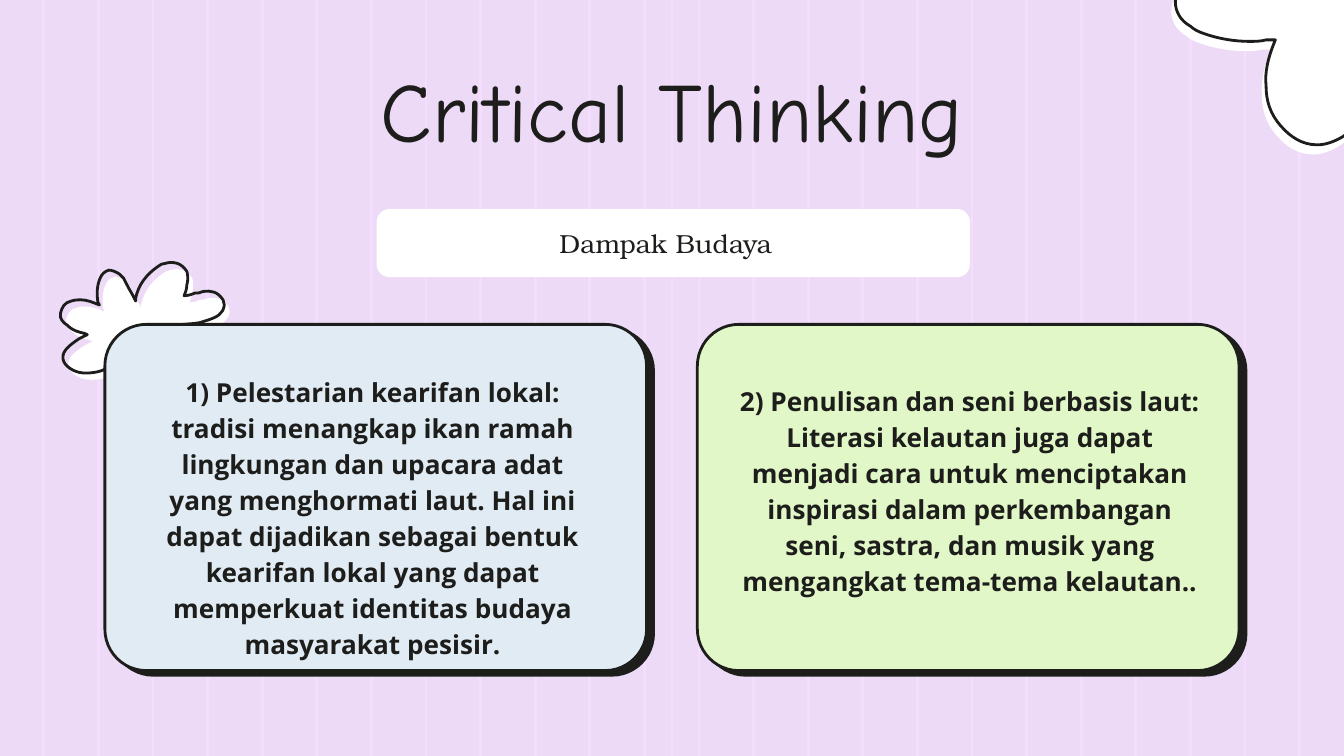
"""Build the Critical Thinking slide on cultural impact."""
from dataclasses import dataclass

import lxml.etree
import pptx
import pptx.dml.color
import pptx.enum.shapes
import pptx.enum.text
import pptx.oxml.ns
import pptx.util

Pt = pptx.util.Pt
RGBColor = pptx.dml.color.RGBColor
MSO_SHAPE = pptx.enum.shapes.MSO_SHAPE
MSO_ANCHOR = pptx.enum.text.MSO_ANCHOR
qn = pptx.oxml.ns.qn

INK = RGBColor(0x1D, 0x1E, 0x1B)
WHITE = RGBColor(0xFF, 0xFF, 0xFF)
LILAC = RGBColor(0xED, 0xDA, 0xF6)
STRIPE = RGBColor(0xF4, 0xDD, 0xFE)
BLUE = RGBColor(0xE1, 0xEB, 0xF4)
GREEN = RGBColor(0xE1, 0xF7, 0xC8)
WIDTH, HEIGHT = 720, 405


@dataclass(frozen=True)
class Box:
    x: float
    y: float
    w: float
    h: float

    def emu(self) -> tuple:
        return Pt(self.x), Pt(self.y), Pt(self.w), Pt(self.h)


@dataclass(frozen=True)
class Style:
    font: str
    size: float
    spacing: float
    bold: bool = False
    anchor: MSO_ANCHOR = MSO_ANCHOR.TOP


@dataclass(frozen=True)
class Card:
    box: Box
    fill: RGBColor
    text_box: Box
    text: str


@dataclass(frozen=True)
class Cloud:
    start: tuple
    curves: tuple
    outline_shift: tuple


TITLE = Style("Comic Neue", 45, 0.9)
LABEL = Style("TeX Gyre Bonum", 14, 1.15, anchor=MSO_ANCHOR.MIDDLE)
BODY = Style("Open Sans", 14, 1.15, bold=True)

CARDS = (
    Card(Box(56.2, 173.8, 290.2, 185.5), BLUE, Box(80.9, 191.9, 237.6, 124.5),
         "1) Pelestarian kearifan lokal: tradisi menangkap ikan ramah lingkungan "
         "dan upacara adat yang menghormati laut. Hal ini dapat dijadikan sebagai "
         "bentuk kearifan lokal yang dapat memperkuat identitas budaya masyarakat pesisir."),
    Card(Box(373.6, 173.8, 290.2, 185.5), GREEN, Box(387.1, 196.8, 265, 124.5),
         "2) Penulisan dan seni berbasis laut: Literasi kelautan juga dapat menjadi "
         "cara untuk menciptakan inspirasi dalam perkembangan seni, sastra, dan musik "
         "yang mengangkat tema-tema kelautan.."),
)

CORNER = Cloud((734.4, -32.4), (
    (727, -31.7, 720.7, -29.5, 714.2, -27.4), (704.2, -23, 695.5, -18, 687.6, -10.1),
    (684.7, -12.2, 681.1, -14.4, 677.5, -15.1), (672.5, -15.8, 668.2, -16.6, 663.1, -16.6),
    (656.6, -16.6, 649.4, -15.1, 643, -13), (638.6, -11.5, 635, -9.4, 632.2, -5.8),
    (626.4, 0, 624.2, 13, 635.8, 19.4), (637.2, 20.9, 640.1, 22.3, 642.2, 23),
    (650.2, 25.9, 658.8, 27.4, 667.4, 27.4), (670.3, 27.4, 673.2, 27.4, 676.1, 26.6),
    (677.5, 26.6, 679, 26.6, 681.1, 26.6), (676.8, 36.7, 675.4, 44.6, 676.1, 51.1),
    (676.1, 59, 678.2, 66.2, 684, 72.7), (689, 78.5, 695.5, 82.8, 703.4, 82.8),
    (707.8, 82.8, 712.1, 81.4, 717.1, 78.5), (722.2, 74.9, 727.2, 70.6, 730.8, 65.5),
    (733, 63.4, 735.1, 60.5, 737.3, 57.6), (737.3, 58.3, 738, 59, 738, 59.8),
    (747.4, 72.7, 758.9, 79.2, 773.3, 79.2),
    (775.4, 79.2, 778.3, 79.2, 780.5, 79.2), (794.9, 77, 807.1, 64.1, 810, 49.7),
    (810.7, 42.5, 808.6, 36.7, 802.8, 31.7), (801.4, 30.2, 799.2, 29.5, 797, 28.1),
    (789.1, 23.8, 780.5, 22.3, 771.8, 21.6), (768.2, 21.6, 764.6, 20.9, 761, 20.9),
    (761.8, 20.2, 762.5, 20.2, 762.5, 19.4),
    (766.1, 15.8, 769, 12.2, 770.4, 7.2), (776.9, -8.6, 770.4, -24.5, 754.6, -30.2),
    (751, -31.7, 747.4, -31.7, 744.5, -32.4),
), (2.2, -5.2))

FLOWER = Cloud((61.2, 148.3), (
    (62.6, 148.3, 64.8, 149, 67, 150.5), (67.7, 151.2, 68.4, 151.9, 69.1, 152.6),
    (70.6, 155.5, 72, 158.4, 73.4, 160.6), (74.2, 162, 74.9, 163.4, 75.6, 164.9),
    (75.6, 164.2, 75.6, 164.2, 75.6, 163.4),
    (77, 156.2, 81.4, 150.5, 87.8, 146.2), (88.6, 145.4, 90, 144.7, 91.4, 144.7),
    (93.6, 144, 95.8, 144, 97.9, 144.7), (100.1, 145.4, 101.5, 146.9, 103, 149),
    (103.7, 151.2, 103.7, 154.1, 103, 156.2), (103, 158.4, 102.2, 160.6, 101.5, 162),
    (103.7, 162, 105.8, 161.3, 107.3, 160.6), (108.7, 160.6, 110.2, 160.6, 111.6, 159.8),
    (115.9, 159.1, 119.5, 159.8, 122.4, 164.2), (122.6, 165, 122.9, 166, 123.1, 167),
    (122.4, 172.1, 118.8, 173.5, 114.5, 175), (113, 175.7, 111.6, 175.7, 110.2, 176.4),
    (106.6, 177.1, 103, 177.1, 97.2, 177.8), (100.8, 179.3, 102.2, 182.2, 102.2, 185),
    (101.5, 190.8, 99.4, 194.4, 94.3, 196.6), (93, 197, 91.5, 197.5, 90, 198),
    (81.4, 198.7, 76.3, 193, 70.6, 187.2), (69.8, 191.5, 68.4, 194.4, 65.5, 197.3),
    (61.9, 200.2, 58.3, 202.3, 54, 203), (49, 203.8, 44.6, 203.8, 40.3, 200.9),
    (36, 198, 35.3, 193.7, 38.9, 190.1), (41, 187.9, 43.2, 186.5, 45.4, 185),
    (46.8, 184.3, 48.2, 183.6, 49.7, 182.9), (49, 182.9, 49, 182.9, 48.2, 182.2),
    (44.6, 181.4, 41.8, 180.7, 38.9, 177.8), (36.7, 176.4, 34.6, 174.2, 35.3, 171.4),
    (36, 168.5, 37.4, 165.6, 41, 164.9), (43.2, 164.2, 44.6, 164.2, 46.1, 164.2),
    (49.7, 164.2, 52.6, 165.6, 56.2, 167), (55.4, 166.3, 55.4, 166.3, 55.4, 165.6),
    (54.7, 161.3, 54.7, 156.2, 56.9, 151.9), (57.6, 150.5, 59, 149, 61.2, 148.3),
), (-2.9, -3.6))


def add_stripe(s, x: float) -> None:
    line = s.shapes.add_connector(pptx.enum.shapes.MSO_CONNECTOR.STRAIGHT,
                                  Pt(x), Pt(0), Pt(x), Pt(HEIGHT))
    line.line.color.rgb = STRIPE
    line.line.width = Pt(1.5)
    lxml.etree.SubElement(line._element.spPr, qn("a:effectLst"))


def add_curved_outline(s, cloud: Cloud, dx: float, dy: float):
    def place(x: float, y: float) -> tuple:
        return Pt(x + dx), Pt(y + dy)

    builder = s.shapes.build_freeform(*place(*cloud.start))
    builder.add_line_segments([place(*c[4:]) for c in cloud.curves], close=True)
    sp = builder.convert_to_shape()
    segments = list(sp._element.iter(qn("a:lnTo")))
    for segment, c in zip(segments, cloud.curves):
        curve = lxml.etree.Element(qn("a:cubicBezTo"))
        for i in (0, 2, 4):
            x, y = place(*c[i:i + 2])
            lxml.etree.SubElement(curve, qn("a:pt"), x=str(x - sp.left), y=str(y - sp.top))
        segment.getparent().replace(segment, curve)
    return sp


def add_cloud(s, cloud: Cloud) -> None:
    back = add_curved_outline(s, cloud, 0, 0)
    back.fill.solid()
    back.fill.fore_color.rgb = WHITE
    back.line.fill.background()
    front = add_curved_outline(s, cloud, *cloud.outline_shift)
    front.fill.background()
    front.line.color.rgb = INK
    front.line.width = Pt(1.5)
    back.shadow.inherit = front.shadow.inherit = False


def add_round_rect(s, box: Box, fill: RGBColor, line: RGBColor, width: float, adj: float):
    sp = s.shapes.add_shape(MSO_SHAPE.ROUNDED_RECTANGLE, *box.emu())
    sp.adjustments[0] = adj
    sp.shadow.inherit = False
    sp.fill.solid()
    sp.fill.fore_color.rgb = fill
    sp.line.color.rgb = line
    sp.line.width = Pt(width)
    return sp


def add_hard_shadow(sp) -> None:
    effects = sp._element.spPr.find(qn("a:effectLst"))
    shadow = lxml.etree.SubElement(effects, qn("a:outerShdw"), dist=str(Pt(4.5)),
                                   dir=str(34 * 60000), algn="bl", rotWithShape="0")
    lxml.etree.SubElement(shadow, qn("a:srgbClr"), val=str(INK))


def write(sp, text: str, style: Style) -> None:
    tf = sp.text_frame
    tf.word_wrap = True
    tf.auto_size = pptx.enum.text.MSO_AUTO_SIZE.NONE
    tf.vertical_anchor = style.anchor
    tf.margin_left = tf.margin_right = tf.margin_top = tf.margin_bottom = Pt(7.2)
    p = tf.paragraphs[0]
    p.alignment = pptx.enum.text.PP_ALIGN.CENTER
    p.line_spacing = style.spacing
    r = p.add_run()
    r.text = text
    r.font.name, r.font.size, r.font.bold = style.font, Pt(style.size), style.bold
    r.font.color.rgb = INK


def main() -> None:
    prs = pptx.Presentation()
    prs.slide_width, prs.slide_height = Pt(WIDTH), Pt(HEIGHT)
    s = prs.slides.add_slide(prs.slide_layouts[5])
    s.background.fill.solid()
    s.background.fill.fore_color.rgb = LILAC
    for i in range(24):
        add_stripe(s, 23.5 + 29.25 * i)
    add_stripe(s, WIDTH / 2)
    add_cloud(s, CORNER)
    add_cloud(s, FLOWER)
    for card in CARDS:
        add_hard_shadow(add_round_rect(s, card.box, card.fill, INK, 1.5, 0.12))
        write(s.shapes.add_textbox(*card.text_box.emu()), card.text, BODY)
    title = s.shapes.title
    title.left, title.top, title.width, title.height = Box(56.2, 30.2, 607.6, 59.8).emu()
    write(title, "Critical Thinking", TITLE)
    title._element.getparent().append(title._element)
    add_round_rect(s, Box(202.8, 113, 315.8, 34.5), WHITE, WHITE, 2, 0.17)
    write(s.shapes.add_textbox(*Box(175.7, 109.4, 362, 39.6).emu()), "Dampak Budaya", LABEL)
    prs.save("out.pptx")


if __name__ == "__main__":
    main()
